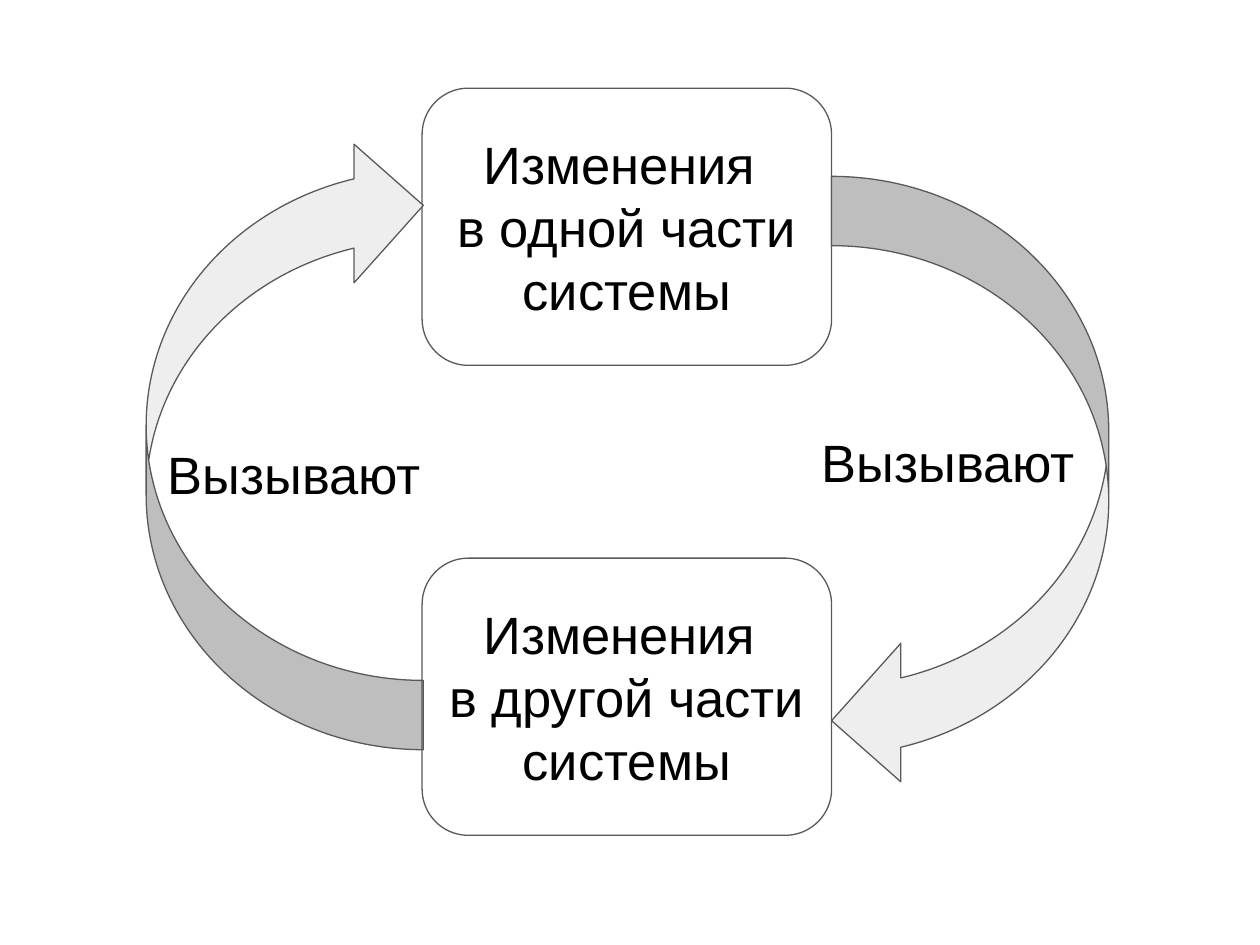
import pptx
import pptx.dml.color
import pptx.enum.shapes
import pptx.enum.text
import pptx.util
from pptx.util import Inches

BLACK = pptx.dml.color.RGBColor(0x00, 0x00, 0x00)
OUTLINE_GRAY = pptx.dml.color.RGBColor(0x59, 0x59, 0x59)
ARROW_GRAY = pptx.dml.color.RGBColor(0xEE, 0xEE, 0xEE)
ROUNDED = pptx.enum.shapes.MSO_SHAPE.ROUNDED_RECTANGLE
CURVED_ARROW = pptx.enum.shapes.MSO_SHAPE.CURVED_LEFT_ARROW
CENTER = pptx.enum.text.PP_ALIGN.CENTER
LEFT = pptx.enum.text.PP_ALIGN.LEFT


def add_outline(shape):
    """Give a shape the thin gray outline of the diagram."""
    shape.line.color.rgb = OUTLINE_GRAY
    shape.line.width = pptx.util.Pt(0.75)


def add_rounded_text(slide, box, lines, alignment):
    """Add an unfilled rounded rectangle with one paragraph per line."""
    shape = slide.shapes.add_shape(ROUNDED, *map(Inches, box))
    shape.adjustments[0] = 0.167
    shape.shadow.inherit = False
    shape.fill.background()
    shape.line.fill.background()
    frame = shape.text_frame
    frame.word_wrap = True
    frame.vertical_anchor = pptx.enum.text.MSO_ANCHOR.MIDDLE
    frame.margin_left = frame.margin_right = Inches(0.1)
    frame.margin_top = frame.margin_bottom = Inches(0.1)
    for index, line in enumerate(lines):
        paragraph = frame.add_paragraph() if index else frame.paragraphs[0]
        paragraph.alignment = alignment
        run = paragraph.add_run()
        run.text = line
        run.font.name = "Arial"
        run.font.size = pptx.util.Pt(30)
        run.font.color.rgb = BLACK
    return shape


def add_change_box(slide, box, lines):
    """Add an outlined box that names a change in the system."""
    add_outline(add_rounded_text(slide, box, lines, CENTER))


def add_cycle_arrow(slide, box, rotation):
    """Add a curved arrow that leads from one change to the other."""
    shape = slide.shapes.add_shape(CURVED_ARROW, *map(Inches, box))
    for index, value in enumerate((0.25, 0.5, 0.25)):
        shape.adjustments[index] = value
    shape.rotation = rotation
    shape.shadow.inherit = False
    shape.fill.solid()
    shape.fill.fore_color.rgb = ARROW_GRAY
    add_outline(shape)


def add_cycle(slide):
    """Place the two changes, the arrows between them and their labels."""
    add_change_box(slide, (3.35, 0.7, 3.25, 2.2),
                   ("Изменения ", "в одной части системы"))
    add_cycle_arrow(slide, (6.6, 1.4, 2.2, 4.87), 0)
    add_cycle_arrow(slide, (1.16, 1.08, 2.2, 4.87), 180)
    add_change_box(slide, (3.35, 4.43, 3.25, 2.2),
                   ("Изменения ", "в другой части системы"))
    for left, top in ((6.35, 2.9), (1.16, 2.99)):
        add_rounded_text(slide, (left, top, 2.46, 1.53), ("Вызывают",), LEFT)


def main():
    """Build and save the one-slide presentation."""
    presentation = pptx.Presentation()
    presentation.slide_width = Inches(10)
    presentation.slide_height = Inches(7.5)
    add_cycle(presentation.slides.add_slide(presentation.slide_layouts[6]))
    presentation.save("out.pptx")


if __name__ == "__main__":
    main()
